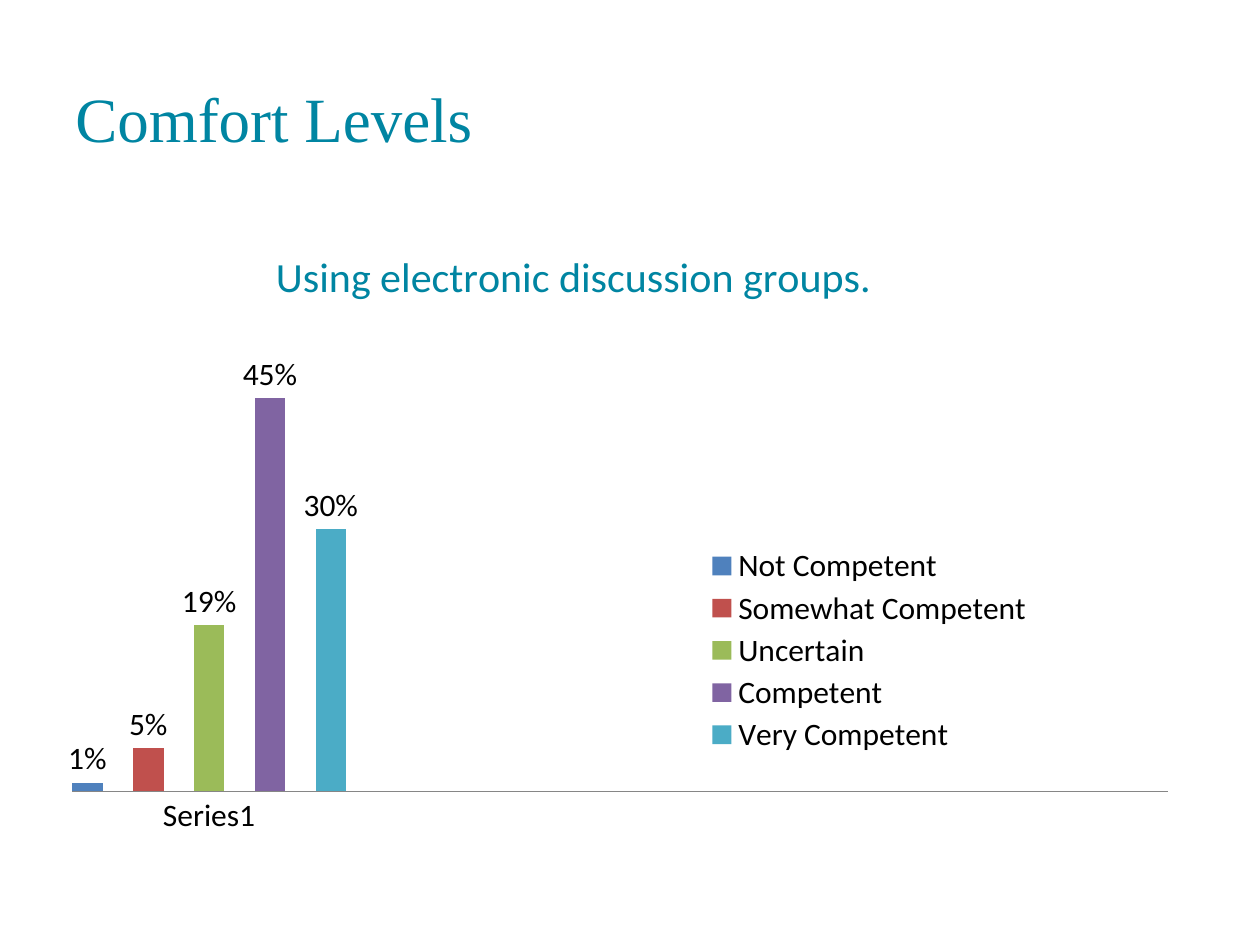
"""Build the Comfort Levels slide with its clustered column chart."""
from lxml import etree
from pptx import Presentation
from pptx.chart.data import CategoryChartData
from pptx.dml.color import RGBColor
from pptx.enum.chart import XL_CHART_TYPE, XL_LABEL_POSITION, XL_LEGEND_POSITION, XL_TICK_MARK
from pptx.enum.text import MSO_ANCHOR
from pptx.oxml.ns import qn
from pptx.util import Emu, Pt

COLUMNS = XL_CHART_TYPE.COLUMN_CLUSTERED
OUTSIDE_END = XL_LABEL_POSITION.OUTSIDE_END
BOTTOM = XL_LEGEND_POSITION.BOTTOM
NO_TICK = XL_TICK_MARK.NONE
MIDDLE = MSO_ANCHOR.MIDDLE

TEAL = RGBColor(0x00, 0x85, 0xA2)
BLACK = RGBColor(0x00, 0x00, 0x00)
GRAY = RGBColor(0x86, 0x86, 0x86)
BLUE = RGBColor(0x4F, 0x81, 0xBD)
RED = RGBColor(0xC0, 0x50, 0x4D)
GREEN = RGBColor(0x9B, 0xBB, 0x59)
PURPLE = RGBColor(0x80, 0x64, 0xA2)
AQUA = RGBColor(0x4B, 0xAC, 0xC6)

EMU_PER_PX = 914400 / 126
CHART_BOX = (53, 210, 1134, 624)
LEVELS = [
    ("Not Competent", 0.01, BLUE),
    ("Somewhat Competent", 0.05, RED),
    ("Uncertain", 0.19, GREEN),
    ("Competent", 0.45, PURPLE),
    ("Very Competent", 0.3, AQUA),
]


def px(*lengths):
    return [Emu(round(length * EMU_PER_PX)) for length in lengths]


def place(part, **fractions):
    for old in part.findall(qn("c:layout")):
        part.remove(old)
    layout = etree.Element(qn("c:layout"))
    manual = etree.SubElement(layout, qn("c:manualLayout"))
    if part.tag == qn("c:plotArea"):
        etree.SubElement(manual, qn("c:layoutTarget")).set("val", "inner")
    for axis in ("x", "y"):
        etree.SubElement(manual, qn(f"c:{axis}Mode")).set("val", "edge")
    for key, value in fractions.items():
        etree.SubElement(manual, qn(f"c:{key}")).set("val", str(value))
    overlay = part.find(qn("c:overlay"))
    part.insert(0 if overlay is None else part.index(overlay), layout)


prs = Presentation()
prs.slide_width, prs.slide_height = px(1260, 945)
slide = prs.slides.add_slide(prs.slide_layouts[6])

heading = slide.shapes.add_textbox(*px(63, 38, 1034, 158)).text_frame
heading.word_wrap = True
heading.vertical_anchor = MIDDLE
heading.text = "Comfort Levels"

data = CategoryChartData(number_format="0%")
data.categories = ["Series1", "", "", ""]
for level, share, color in LEVELS:
    data.add_series(level, [share, None, None, None])
chart = slide.shapes.add_chart(COLUMNS, *px(*CHART_BOX), data).chart

chart.has_title = True
question = chart.chart_title.text_frame
question.text = "Using electronic discussion groups."
chart.has_legend = True
plot = chart.plots[0]
plot.has_data_labels = True
share_axis = chart.value_axis
level_axis = chart.category_axis
level_axis.format.line.color.rgb = GRAY

FORMATS = [
    (heading.paragraphs[0].font, {"name": "Times New Roman", "size": Pt(36)}),
    (heading.paragraphs[0].font.color, {"rgb": TEAL}),
    (chart.font, {"name": "Calibri", "size": Pt(18)}),
    (chart.font.color, {"rgb": BLACK}),
    (question.paragraphs[0].runs[0].font, {"name": "Calibri", "size": Pt(24), "bold": False}),
    (question.paragraphs[0].runs[0].font.color, {"rgb": TEAL}),
    (chart.legend, {"position": BOTTOM, "include_in_layout": False}),
    (plot, {"gap_width": 0, "overlap": -100, "vary_by_categories": False}),
    (plot.data_labels, {"show_value": True, "position": OUTSIDE_END,
                        "number_format": "0%", "number_format_is_linked": False}),
    (share_axis, {"visible": False, "has_major_gridlines": False,
                  "minimum_scale": 0, "maximum_scale": 0.5}),
    (level_axis, {"major_tick_mark": NO_TICK, "minor_tick_mark": NO_TICK}),
]
for target, values in FORMATS:
    for key, value in values.items():
        setattr(target, key, value)

for series, (level, share, color) in zip(plot.series, LEVELS):
    series.format.fill.solid()
    series.format.fill.fore_color.rgb = color
    series.invert_if_negative = False

plot_area = chart.element.find(".//" + qn("c:plotArea"))
place(plot_area, x=0.017, y=0.235, w=0.966, h=0.709)
place(chart.chart_title.element if hasattr(chart.chart_title, "element")
      else chart.element.find(".//" + qn("c:title")), x=0.19, y=0.05)
place(chart.element.find(".//" + qn("c:legend")), x=0.57, y=0.54, w=0.3, h=0.35)

prs.save("out.pptx")
